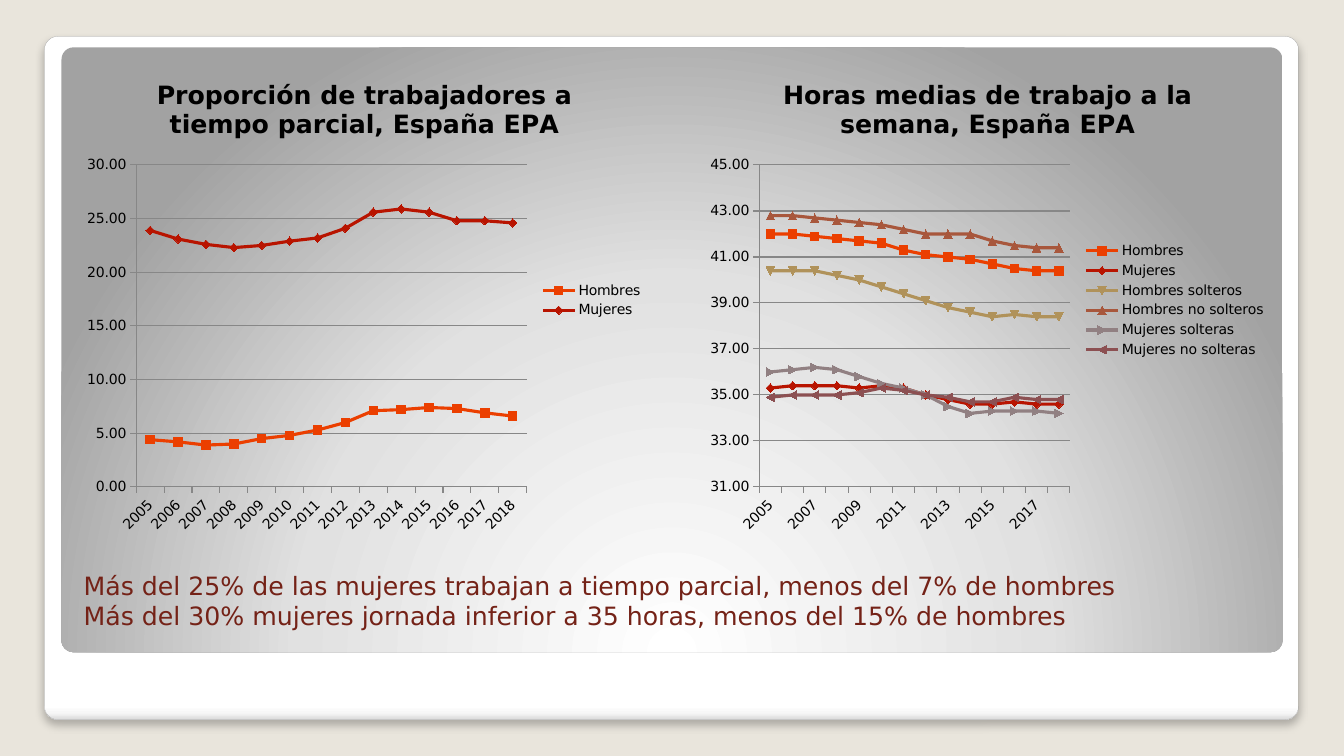
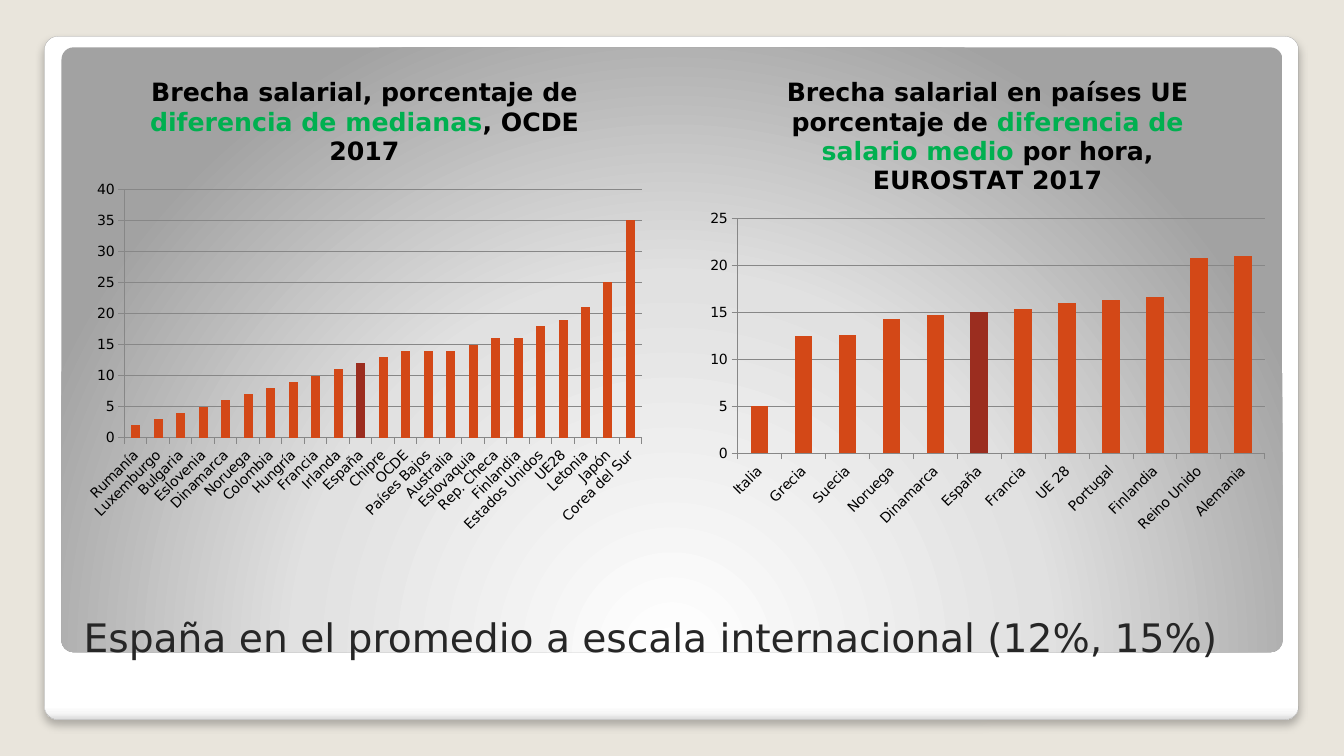
from dataclasses import dataclass

from pptx import Presentation, util as u
from pptx.chart import data
from pptx.dml import color
from pptx.enum import chart as charts, shapes, text
from pptx.oxml import ns, parse_xml


@dataclass(frozen=True)
class Theme:
    font: str = "DejaVu Sans"
    background: str = "E9E5DC"
    ink: str = "000000"
    rule: str = "878787"
    card_line: str = "A4A4A4"
    highlight: str = "00B050"
    bar: str = "D34817"
    spain: str = "9B2D1F"
    maroon: str = "742217"
    charcoal: str = "262626"
    lines: tuple = ("EB3F00", "B81400", "B0925A", "A8573C", "918082", "8C5052")
    label_size: int = 10
    chart_title_size: int = 18
    note_size: int = 18
    headline_size: int = 28


@dataclass(frozen=True)
class Box:
    left: float
    top: float
    width: float
    height: float

    def place(self):
        return [u.Inches(v) for v in (self.left, self.top, self.width, self.height)]

    def columns(self, count, gap):
        width = (self.width - gap * (count - 1)) / count
        return [Box(self.left + i * (width + gap), self.top, width, self.height)
                for i in range(count)]


THEME = Theme()
WIDTH, HEIGHT = 13.33, 7.5
CARD = Box(0.44, 0.36, 12.44, 6.78)
PANEL = Box(0.61, 0.47, 12.11, 6)
CHARTS = Box(0.75, 0.58, 11.91, 4.8)
TITLE = Box(0.73, 5.45, 11.93, 1.15)
CHART_GAP = 0.45
CARD_STOPS = ((0, "FFFFFF"), (98, "FFFFFF"), (99, "F7F7F7"), (100, "DADADA"))
PANEL_STOPS = ((0, "FFFFFF"), (55, "E1E1E1"), (100, "A2A2A2"))
CARD_SHADE = '<a:lin ang="5400000" scaled="0"/>'
PANEL_SHADE = ('<a:path path="circle"><a:fillToRect l="50000" t="175000" '
               'r="50000" b="-75000"/></a:path>')

YEARS = [str(year) for year in range(2005, 2019)]
PART_TIME = {
    "Hombres": (4.4, 4.2, 3.9, 4, 4.5, 4.8, 5.3, 6, 7.1, 7.2, 7.4, 7.3, 6.9, 6.6),
    "Mujeres": (23.9, 23.1, 22.6, 22.3, 22.5, 22.9, 23.2, 24.1, 25.6, 25.9, 25.6,
                24.8, 24.8, 24.6),
}
HOURS = {
    "Hombres": (42, 42, 41.9, 41.8, 41.7, 41.6, 41.3, 41.1, 41, 40.9, 40.7, 40.5,
                40.4, 40.4),
    "Mujeres": (35.3, 35.4, 35.4, 35.4, 35.3, 35.4, 35.3, 35, 34.8, 34.6, 34.6,
                34.7, 34.6, 34.6),
    "Hombres solteros": (40.4, 40.4, 40.4, 40.2, 40, 39.7, 39.4, 39.1, 38.8, 38.6,
                         38.4, 38.5, 38.4, 38.4),
    "Hombres no solteros": (42.8, 42.8, 42.7, 42.6, 42.5, 42.4, 42.2, 42, 42, 42,
                            41.7, 41.5, 41.4, 41.4),
    "Mujeres solteras": (36, 36.1, 36.2, 36.1, 35.8, 35.5, 35.3, 35, 34.5, 34.2,
                         34.3, 34.3, 34.3, 34.2),
    "Mujeres no solteras": (34.9, 35, 35, 35, 35.1, 35.3, 35.2, 35, 34.9, 34.7,
                            34.7, 34.9, 34.8, 34.8),
}
MEDIAN_GAP = {
    "Rumanía": 2, "Luxemburgo": 3, "Bulgaria": 4, "Eslovenia": 5, "Dinamarca": 6,
    "Noruega": 7, "Colombia": 8, "Hungría": 9, "Francia": 10, "Irlanda": 11,
    "España": 12, "Chipre": 13, "OCDE": 14, "Países Bajos": 14, "Australia": 14,
    "Eslovaquia": 15, "Rep. Checa": 16, "Finlandia": 16, "Estados Unidos": 18,
    "UE28": 19, "Letonia": 21, "Japón": 25, "Corea del Sur": 35,
}
MEAN_GAP = {
    "Italia": 5, "Grecia": 12.5, "Suecia": 12.6, "Noruega": 14.3, "Dinamarca": 14.7,
    "España": 15.1, "Francia": 15.4, "UE 28": 16, "Portugal": 16.3,
    "Finlandia": 16.7, "Reino Unido": 20.8, "Alemania": 21,
}


def rgb(value):
    return color.RGBColor.from_string(value)


def assign(target, **values):
    for name, value in values.items():
        setattr(target, name, value)


def paint(fill, value):
    fill.solid()
    fill.fore_color.rgb = rgb(value)


def style_font(font, size, value, bold=False):
    assign(font, name=THEME.font, size=u.Pt(size), bold=bold)
    font.color.rgb = rgb(value)


def add_rounded(slide, box, stops, shade):
    shape = slide.shapes.add_shape(shapes.MSO_SHAPE.ROUNDED_RECTANGLE, *box.place())
    shape.adjustments[0] = 0.02
    shape.line.fill.background()
    shape.shadow.inherit = False
    marks = "".join(f'<a:gs pos="{position * 1000}"><a:srgbClr val="{value}"/></a:gs>'
                    for position, value in stops)
    shape.element.spPr.insert(2, parse_xml(
        f'<a:gradFill {ns.nsdecls("a")} rotWithShape="1"><a:gsLst>{marks}</a:gsLst>'
        f'{shade}</a:gradFill>'))
    return shape


def add_frame(slide, layout):
    paint(layout.background.fill, THEME.background)
    card = add_rounded(slide, CARD, CARD_STOPS, CARD_SHADE)
    paint(card.line.fill, THEME.card_line)
    card.line.width = u.Pt(0.16)
    card.element.spPr[-1].append(parse_xml(
        f'<a:outerShdw {ns.nsdecls("a")} blurRad="{u.Pt(6)}" dist="{u.Pt(4)}" '
        'dir="5400000" algn="tl" rotWithShape="0"><a:srgbClr val="000000">'
        '<a:alpha val="25000"/></a:srgbClr></a:outerShdw>'))
    panel = add_rounded(slide, PANEL, PANEL_STOPS, PANEL_SHADE)
    tree = layout.shapes.element
    for index, shape in enumerate((card, panel), 2):
        tree.insert(index, shape.element)


def format_title(slide, box, wording, size, value, bottom):
    title = slide.shapes.title
    left, top, width, height = box.place()
    assign(title, left=left, top=top, width=width, height=height)
    frame = title.text_frame
    assign(frame, text=wording, word_wrap=True, auto_size=text.MSO_AUTO_SIZE.NONE,
           vertical_anchor=text.MSO_ANCHOR.BOTTOM, margin_left=u.Inches(0.1),
           margin_bottom=u.Inches(bottom))
    paragraph = frame.paragraphs[0]
    paragraph.alignment = text.PP_ALIGN.LEFT
    for run in paragraph.runs:
        style_font(run.font, size, value)


def add_chart(slide, box, kind, categories, series, title, scale, number_format):
    chart_data = data.CategoryChartData()
    chart_data.categories = categories
    for name, values in series.items():
        chart_data.add_series(name, values)
    chart = slide.shapes.add_chart(kind, *box.place(), chart_data).chart
    style_font(chart.font, THEME.label_size, THEME.ink)
    chart.has_title = True
    chart.chart_title.include_in_layout = False
    paragraph = chart.chart_title.text_frame.paragraphs[0]
    for wording, value in title:
        run = paragraph.add_run()
        run.text = wording
        style_font(run.font, THEME.chart_title_size, value, True)

    minimum, maximum, step = scale
    assign(chart.value_axis, minimum_scale=minimum, maximum_scale=maximum,
           major_unit=step, has_major_gridlines=True)
    assign(chart.value_axis.tick_labels, number_format=number_format,
           number_format_is_linked=False)
    for axis in (chart.category_axis, chart.value_axis):
        axis.major_tick_mark = charts.XL_TICK_MARK.OUTSIDE
        style_font(axis.tick_labels.font, THEME.label_size, THEME.ink)
    for line in (chart.category_axis.format.line, chart.value_axis.format.line,
                 chart.value_axis.major_gridlines.format.line):
        paint(line.fill, THEME.rule)
        line.width = u.Pt(0.75)
    properties = chart.category_axis.tick_labels.font._element.getparent().getparent()
    properties.getparent().find(ns.qn("a:bodyPr")).set("rot", "-2700000")
    chart.plots[0].vary_by_categories = False
    return chart


def add_line_chart(slide, box, series, title, scale):
    chart = add_chart(slide, box, charts.XL_CHART_TYPE.LINE_MARKERS, YEARS, series,
                      [(title, THEME.ink)], scale, "0.00")
    chart.has_legend = True
    assign(chart.legend, position=charts.XL_LEGEND_POSITION.RIGHT,
           include_in_layout=False)
    style_font(chart.legend.font, THEME.label_size, THEME.ink)
    for line, value in zip(chart.plots[0].series, THEME.lines):
        line.smooth = False
        paint(line.format.line.fill, value)
        line.format.line.width = u.Pt(2.25)
        line.marker.size = 6
        paint(line.marker.format.fill, value)
        paint(line.marker.format.line.fill, value)


def add_bar_chart(slide, box, gaps, title, scale):
    chart = add_chart(slide, box, charts.XL_CHART_TYPE.COLUMN_CLUSTERED, list(gaps),
                      {"Series 1": list(gaps.values())}, title, scale, "#,##0")
    chart.has_legend = False
    chart.plots[0].gap_width = 150
    bars = chart.plots[0].series[0]
    paint(bars.format.fill, THEME.bar)
    paint(bars.points[list(gaps).index("España")].format.fill, THEME.spain)


def build_working_time(slide):
    format_title(slide, TITLE,
                 "Más del 25% de las mujeres trabajan a tiempo parcial, menos del 7% de hombres\v"
                 "Más del 30% mujeres jornada inferior a 35 horas, menos del 15% de hombres",
                 THEME.note_size, THEME.maroon, 0.34)
    left, right = CHARTS.columns(2, CHART_GAP)
    add_line_chart(slide, left, PART_TIME,
                   "Proporción de trabajadores a tiempo parcial, España EPA", (0, 30, 5))
    add_line_chart(slide, right, HOURS,
                   "Horas medias de trabajo a la semana, España EPA", (31, 45, 2))


def build_pay_gap(slide):
    format_title(slide, TITLE, "España en el promedio a escala internacional (12%, 15%)",
                 THEME.headline_size, THEME.charcoal, 0.05)
    left, right = CHARTS.columns(2, CHART_GAP)
    add_bar_chart(slide, left, MEDIAN_GAP,
                  [("Brecha salarial, porcentaje de ", THEME.ink),
                   ("diferencia de medianas", THEME.highlight),
                   (", OCDE 2017", THEME.ink)], (0, 40, 5))
    add_bar_chart(slide, right, MEAN_GAP,
                  [("Brecha salarial en países UE porcentaje de ", THEME.ink),
                   ("diferencia de salario medio", THEME.highlight),
                   (" por hora, EUROSTAT 2017", THEME.ink)], (0, 25, 5))


def main():
    presentation = Presentation()
    assign(presentation, slide_width=u.Inches(WIDTH), slide_height=u.Inches(HEIGHT))
    layout = presentation.slide_layouts.get_by_name("Title Only")
    builders = (build_working_time, build_pay_gap)
    slides = [presentation.slides.add_slide(layout) for _ in builders]
    add_frame(slides[0], layout)
    for build, slide in zip(builders, slides):
        build(slide)
    presentation.save("out.pptx")


if __name__ == "__main__":
    main()
